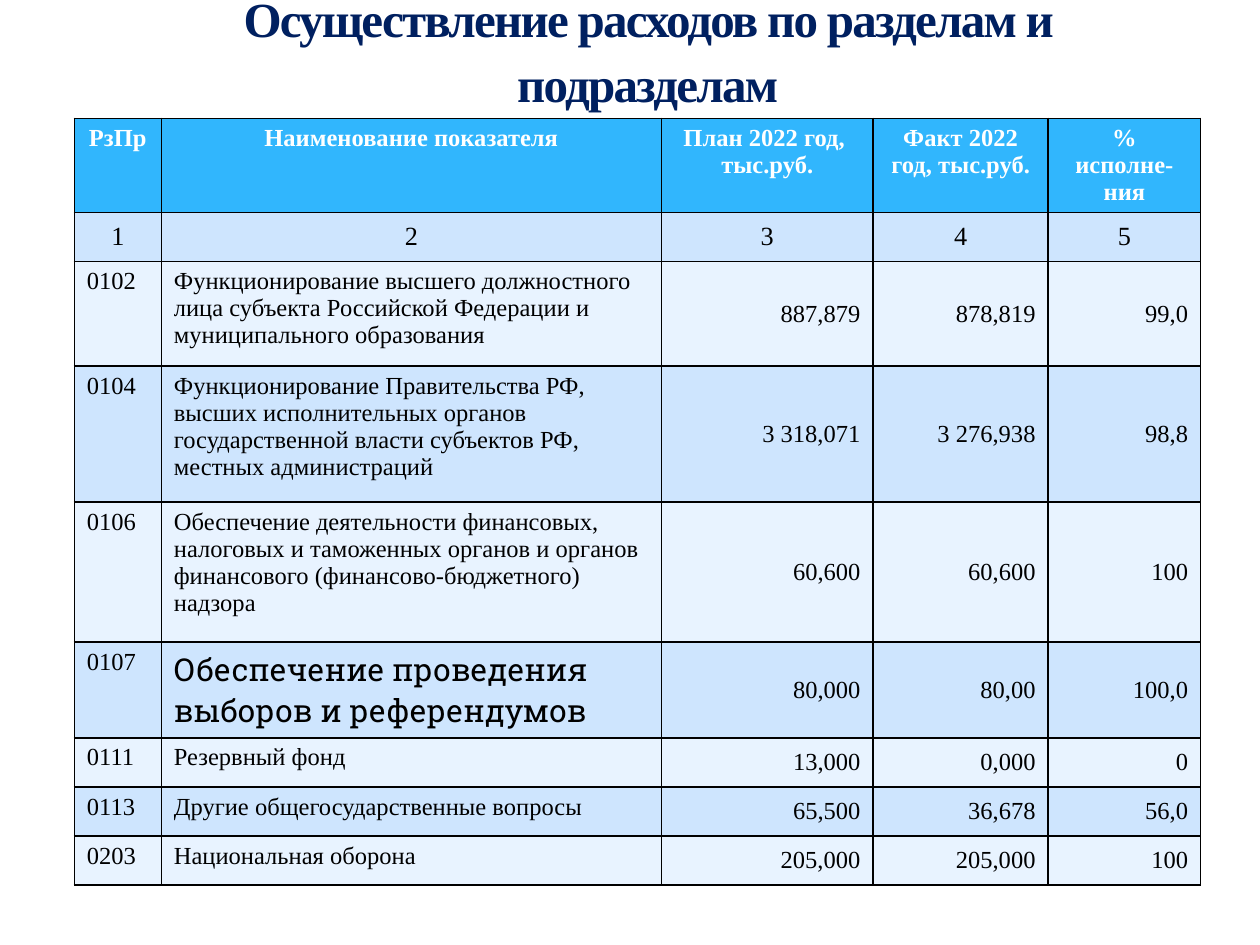
import pptx
import pptx.dml.color
import pptx.enum.text
import pptx.oxml
import pptx.oxml.ns
import pptx.util
from dataclasses import dataclass

Inches = pptx.util.Inches
Align = pptx.enum.text.PP_ALIGN
Anchor = pptx.enum.text.MSO_ANCHOR


@dataclass(frozen=True)
class Theme:
    font: str = "Times New Roman"
    slab_font: str = "Roboto Slab"
    navy: str = "002060"
    header: str = "31B6FD"
    bands: tuple = ("CEE5FE", "E8F3FF")
    white: str = "FFFFFF"
    black: str = "000000"
    title_size: int = 28
    body_size: int = 14
    number_size: int = 15
    slab_size: int = 18


theme = Theme()


def add_span(para, text, size, color, bold=False, font=theme.font):
    span = para.add_run()
    span.text = text
    span.font.name = font
    span.font.size = pptx.util.Pt(size)
    span.font.bold = bold
    span.font.color.rgb = pptx.dml.color.RGBColor.from_string(color)
    return span


def add_borders(cell):
    properties = cell._tc.get_or_add_tcPr()
    for position, side in enumerate(("lnL", "lnR", "lnT", "lnB")):
        line = pptx.oxml.parse_xml(
            f'<a:{side} {pptx.oxml.ns.nsdecls("a")} w="12700"><a:solidFill>'
            f'<a:srgbClr val="{theme.black}"/></a:solidFill></a:{side}>'
        )
        properties.insert(position, line)


column_widths = [0.69, 3.97, 1.68, 1.39, 1.21]
row_heights = [0.61, 0.39, 0.83, 1.08, 1.11, 0.73, 0.39, 0.39, 0.39]
rows = [
    ["РзПр", "Наименование показателя", "План 2022 год, \nтыс.руб.",
     "Факт 2022 год, тыс.руб.", "% исполне-ния"],
    ["1", "2", "3", "4", "5"],
    ["0102", "Функционирование высшего должностного лица субъекта Российской "
     "Федерации и муниципального образования", "887,879", "878,819", "99,0"],
    ["0104", "Функционирование Правительства РФ, высших исполнительных органов "
     "государственной власти субъектов РФ, местных администраций",
     "3 318,071", "3 276,938", "98,8"],
    ["0106", "Обеспечение деятельности финансовых, налоговых и таможенных органов "
     "и органов финансового (финансово-бюджетного) надзора",
     "60,600", "60,600", "100"],
    ["0107", "Обеспечение проведения выборов и референдумов",
     "80,000", "80,00", "100,0"],
    ["0111", "Резервный фонд", "13,000", "0,000", "0"],
    ["0113", "Другие общегосударственные вопросы", "65,500", "36,678", "56,0"],
    ["0203", "Национальная оборона", "205,000", "205,000", "100"],
]

deck = pptx.Presentation()
deck.slide_width = Inches(10)
deck.slide_height = Inches(7.5)
page = deck.slides.add_slide(deck.slide_layouts[6])

table = page.shapes.add_table(
    len(rows), len(column_widths), Inches(0.59), Inches(0.94),
    Inches(sum(column_widths)), Inches(sum(row_heights)),
).table
for column, width in zip(table.columns, column_widths):
    column.width = Inches(width)
for table_row, height in zip(table.rows, row_heights):
    table_row.height = Inches(height)

for row_index, row in enumerate(rows):
    is_header = row_index == 0
    is_numbering = row_index == 1
    fill = theme.header if is_header else theme.bands[(row_index - 1) % 2]
    color = theme.white if is_header else theme.black
    for column_index, text in enumerate(row):
        is_figure = column_index >= 2
        cell = table.cell(row_index, column_index)
        cell.fill.solid()
        cell.fill.fore_color.rgb = pptx.dml.color.RGBColor.from_string(fill)
        add_borders(cell)

        align = Align.RIGHT if is_figure else Align.LEFT
        if is_header or is_numbering:
            align = Align.CENTER
        if is_numbering or (is_figure and not is_header):
            cell.vertical_anchor = Anchor.MIDDLE

        size, font = theme.body_size, theme.font
        if is_numbering:
            size = theme.number_size
        elif row[0] == "0107" and column_index == 1:
            size, font = theme.slab_size, theme.slab_font

        for line_index, line in enumerate(text.split("\n")):
            frame = cell.text_frame
            para = frame.add_paragraph() if line_index else frame.paragraphs[0]
            para.alignment = align
            add_span(para, line, size, color, is_header, font)

box = page.shapes.add_textbox(Inches(1.3), Inches(0.16), Inches(7.68), Inches(0.78))
box.text_frame.word_wrap = True
box.text_frame.vertical_anchor = Anchor.BOTTOM
para = box.text_frame.paragraphs[0]
para.alignment = Align.CENTER
para.line_spacing = 1.1
span = add_span(para, "Осуществление расходов по разделам и подразделам",
                theme.title_size, theme.navy, True)
span._r.get_or_add_rPr().set("spc", "-100")

deck.save("out.pptx")
